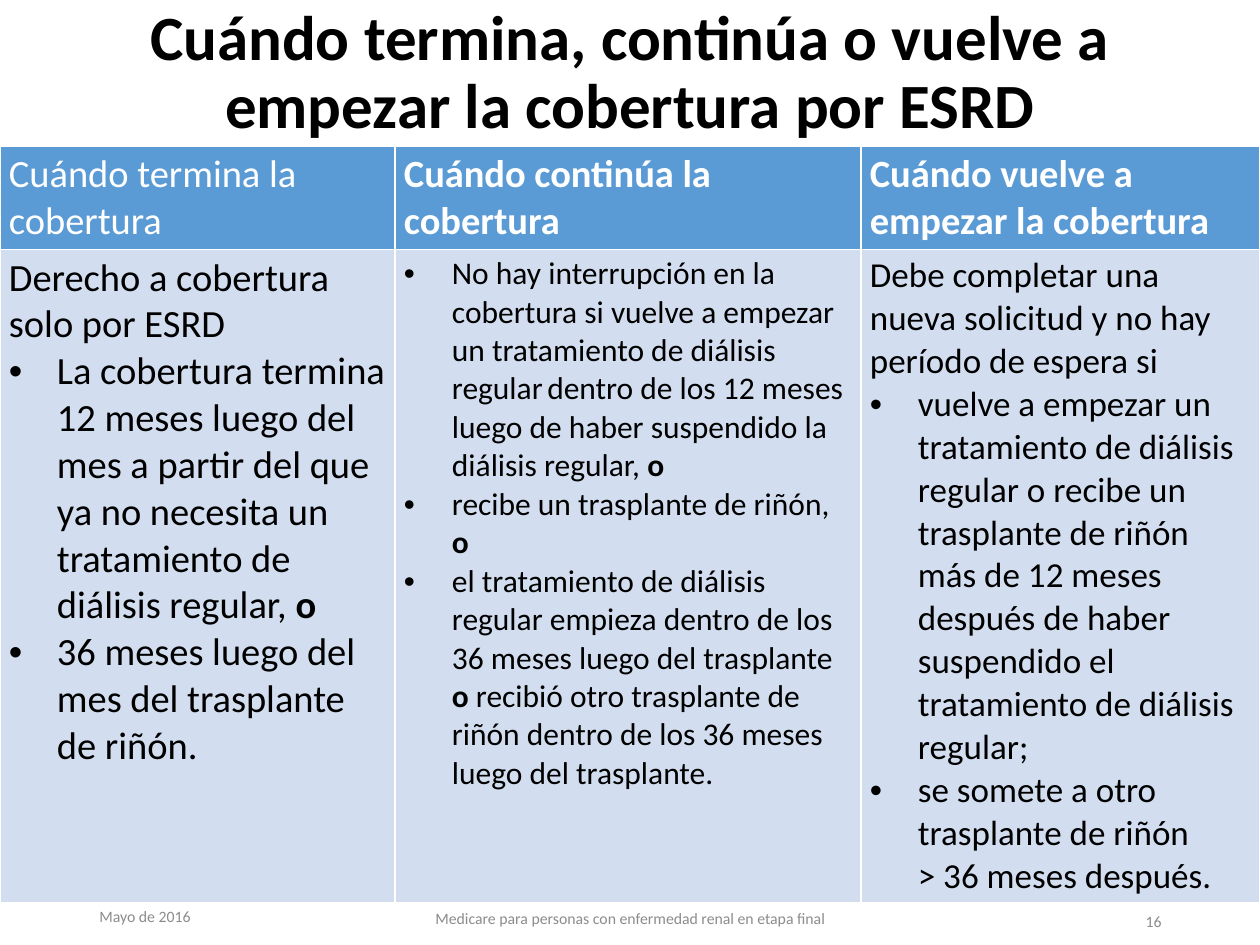
from lxml.etree import SubElement
from pptx import Presentation
from pptx.dml.color import RGBColor
from pptx.enum.text import MSO_ANCHOR as Anchor, PP_ALIGN as Align
from pptx.oxml import parse_xml
from pptx.oxml.ns import nsdecls, qn
from pptx.util import Emu, Pt

PX = 914400 // 126
BLACK = RGBColor(0x00, 0x00, 0x00)
WHITE = RGBColor(0xFF, 0xFF, 0xFF)
GRAY = RGBColor(0x8C, 0x8C, 0x8C)
BLUE = RGBColor(0x5B, 0x9B, 0xD5)
PALE = RGBColor(0xD2, 0xDE, 0xEF)
INDENT = 48

TITLE = "Cuándo termina, continúa o vuelve a empezar la cobertura por ESRD"
COLUMN_WIDTHS = (395, 466, 399)
ROW_HEIGHTS = (96, 635)
HEADERS = (
    ("Cuándo termina la cobertura", False),
    ("Cuándo continúa la cobertura", True),
    ("Cuándo vuelve a empezar la cobertura", True),
)
O = ("o", {"bold": True})
ENDS = (22, [
    (False, ["Derecho a cobertura solo por ESRD"]),
    (True, ["La cobertura termina 12 meses luego del mes a partir del que",
            (" ", {"size": 18}),
            "ya no necesita un tratamiento de diálisis regular, ", O]),
    (True, ["36 meses luego del mes del trasplante de riñón."]),
])
CONTINUES = (18, [
    (True, ["No hay interrupción en la cobertura si vuelve a empezar "
            "un tratamiento de diálisis regular",
            (" ", {"size": 11}),
            "dentro de los 12 meses luego de haber suspendido la diálisis regular, ", O]),
    (True, ["recibe un trasplante de riñón, ", O]),
    (True, ["el tratamiento de diálisis regular empieza dentro de los 36 meses "
            "luego del trasplante ", O,
            " recibió otro trasplante de riñón dentro de los 36 meses "
            "luego del trasplante."]),
])
RESTARTS = (20, [
    (False, ["Debe completar una nueva solicitud y no hay período de espera si"]),
    (True, ["vuelve a empezar un tratamiento de diálisis regular o recibe un "
            "trasplante de riñón más de 12 meses después de haber suspendido "
            "el tratamiento de diálisis regular;"]),
    (True, ["se somete a otro trasplante de riñón\n> 36 meses después."]),
])
FOOTERS = (
    ("Mayo de 2016", Align.LEFT, (87, 891, 284, 50)),
    ("Medicare para personas con enfermedad renal en etapa final",
     Align.CENTER, (417, 893, 426, 50)),
    ("16", Align.RIGHT, (890, 896, 284, 50)),
)


def px(value):
    return Emu(value * PX)


def apply(target, values):
    for attribute, value in values.items():
        setattr(target, attribute, value)


def add_text(paragraph, text, size, color, bold=False):
    for index, line in enumerate(text.split("\n")):
        if index:
            paragraph.add_line_break()
        run = paragraph.add_run()
        run.text = line
        run.font.color.rgb = color
        apply(run.font, {"name": "Calibri", "size": Pt(size), "bold": bold})


def set_indent(paragraph, bulleted):
    properties = paragraph._p.get_or_add_pPr()
    indent = px(INDENT) if bulleted else 0
    properties.set("marL", str(int(indent)))
    properties.set("indent", str(-int(indent)))
    if bulleted:
        SubElement(properties, qn("a:buFont")).set("typeface", "Arial")
        SubElement(properties, qn("a:buChar")).set("char", "•")


def add_title(slide, box):
    title = slide.shapes.title
    apply(title, dict(zip(("left", "top", "width", "height"), map(px, box))))
    frame = title.text_frame
    apply(frame, {"word_wrap": True, "vertical_anchor": Anchor.MIDDLE})
    heading = frame.paragraphs[0]
    apply(heading, {"alignment": Align.CENTER, "line_spacing": 0.9})
    add_text(heading, TITLE, 36, BLACK, True)


def format_cell(cell, color):
    apply(cell, {"margin_left": px(9), "margin_right": px(9),
                 "margin_top": px(5), "margin_bottom": px(5)})
    properties = cell._tc.get_or_add_tcPr()
    for side in "LRTB":
        properties.append(parse_xml(
            f'<a:ln{side} {nsdecls("a")} w="12700"><a:solidFill>'
            f'<a:srgbClr val="{WHITE}"/></a:solidFill></a:ln{side}>'))
    cell.fill.solid()
    cell.fill.fore_color.rgb = color


def fill_body(cell, size, paragraphs):
    frame = cell.text_frame
    for index, (bulleted, parts) in enumerate(paragraphs):
        paragraph = frame.add_paragraph() if index else frame.paragraphs[0]
        set_indent(paragraph, bulleted)
        paragraph.font.size = Pt(size)
        for part in parts:
            text, changes = (part, {}) if isinstance(part, str) else part
            add_text(paragraph, text, **{"size": size, "color": BLACK, **changes})


def add_coverage_table(slide, left, top):
    coverage = slide.shapes.add_table(
        len(ROW_HEIGHTS), len(COLUMN_WIDTHS), px(left), px(top),
        px(sum(COLUMN_WIDTHS)), px(sum(ROW_HEIGHTS))).table
    for row, height in zip(coverage.rows, ROW_HEIGHTS):
        row.height = px(height)
    bodies = (ENDS, CONTINUES, RESTARTS)
    for index, (width, (header, bold), body) in enumerate(
            zip(COLUMN_WIDTHS, HEADERS, bodies)):
        coverage.columns[index].width = px(width)
        header_cell, body_cell = (coverage.cell(row, index) for row in range(2))
        format_cell(header_cell, BLUE)
        format_cell(body_cell, PALE)
        add_text(header_cell.text_frame.paragraphs[0], header, 22, WHITE, bold)
        fill_body(body_cell, *body)


def add_footer(slide, text, alignment, box):
    frame = slide.shapes.add_textbox(*map(px, box)).text_frame
    apply(frame, {"word_wrap": True, "vertical_anchor": Anchor.MIDDLE})
    frame.paragraphs[0].alignment = alignment
    add_text(frame.paragraphs[0], text, 9, GRAY)


def main():
    deck = Presentation()
    apply(deck, {"slide_width": px(1260), "slide_height": px(945)})
    slide = deck.slides.add_slide(deck.slide_layouts[5])
    add_title(slide, (87, 0, 1086, 149))
    add_coverage_table(slide, 0, 146)
    for footer in FOOTERS:
        add_footer(slide, *footer)
    deck.save("out.pptx")


if __name__ == "__main__":
    main()
